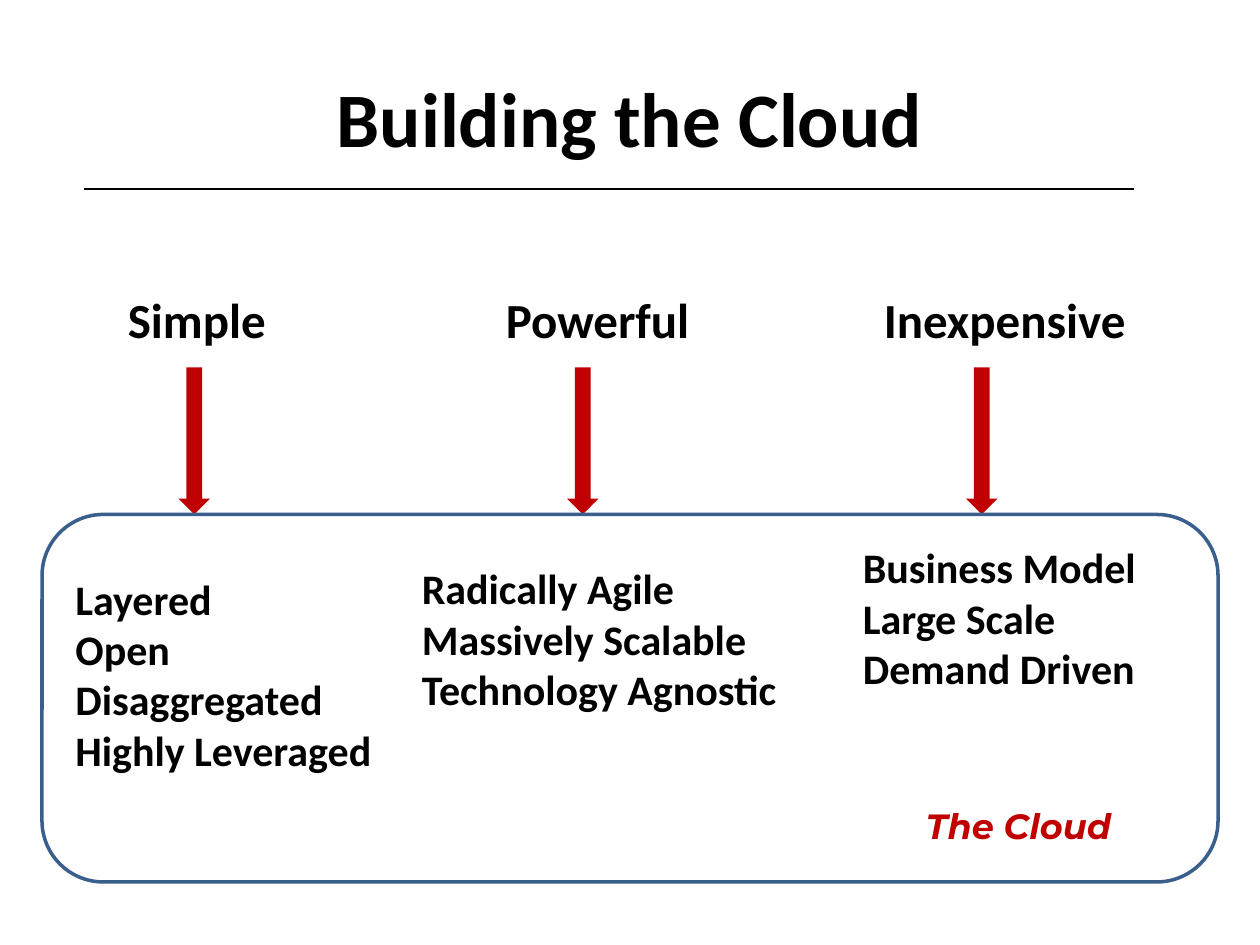
from pptx import Presentation, util as u
from pptx.dml import color
from pptx.enum import shapes, text
from pptx.oxml import ns
from lxml import etree

Pt = u.Pt
COLORS = {"ink": "000000", "accent": "C00000", "frame": "3A5F8C"}
BODY_FONT, LABEL_FONT = "Calibri", "Montserrat"
ARROW_LENGTH, ARROW_THICKNESS = 84, 18
HEADINGS = ["Simple", "Powerful", "Inexpensive"]
HEADING_STEP = 216
PILLARS = [
    (111, (12, 30, 186, 124),
     ["Layered", "Open", "Disaggregated", "Highly Leveraged"]),
    (333, (210, 24, 222, 94.5),
     ["Radically Agile", "Massively Scalable", "Technology Agnostic"]),
    (561, (462, 12, 186, 94.5),
     ["Business Model", "Large Scale", "Demand Driven"]),
]


def rgb(name):
    return color.RGBColor.from_string(COLORS[name])


def add_words(paragraph, words, size, tone="ink", font=BODY_FONT, italic=None):
    run = paragraph.add_run()
    run.text = words
    run.font.size = Pt(size)
    run.font.name = font
    run.font.bold = True
    run.font.italic = italic
    run.font.color.rgb = rgb(tone)


def add_text(slide, box, lines, size, wrap=True, **style):
    frame = slide.shapes.add_textbox(*map(Pt, box)).text_frame
    frame.word_wrap = wrap
    frame.auto_size = text.MSO_AUTO_SIZE.SHAPE_TO_FIT_TEXT
    for index, line in enumerate(lines):
        paragraph = frame.add_paragraph() if index else frame.paragraphs[0]
        add_words(paragraph, line, size, **style)
    return frame


def add_header(slide, box):
    left, top, width, height = box
    title = slide.shapes.title
    title.left, title.top, title.width, title.height = map(Pt, box)
    title.text_frame.vertical_anchor = text.MSO_ANCHOR.MIDDLE
    heading = title.text_frame.paragraphs[0]
    heading.alignment = text.PP_ALIGN.CENTER
    add_words(heading, "Building the Cloud", 44)

    rule_y = Pt(top + height - 3.6)
    rule = slide.shapes.add_connector(
        shapes.MSO_CONNECTOR.STRAIGHT,
        Pt(left + 12), rule_y, Pt(left + width - 36), rule_y)
    rule.line.color.rgb = rgb("ink")
    rule.line.width = Pt(1.5)
    etree.SubElement(rule.element.spPr, ns.qn("a:effectLst"))


def add_headings(slide, box):
    frame = add_text(slide, box, ["\t".join(HEADINGS)], 28, wrap=False)
    properties = frame.paragraphs[0]._p.get_or_add_pPr()
    tab_list = etree.SubElement(properties, ns.qn("a:tabLst"))
    for column in range(1, len(HEADINGS)):
        etree.SubElement(tab_list, ns.qn("a:tab"),
                         pos=str(Pt(column * HEADING_STEP)), algn="l")


def add_arrow(slide, center_x, tip_y):
    arrow = slide.shapes.add_shape(
        shapes.MSO_SHAPE.RIGHT_ARROW,
        Pt(center_x - ARROW_LENGTH / 2),
        Pt(tip_y - ARROW_LENGTH / 2 - ARROW_THICKNESS / 2),
        Pt(ARROW_LENGTH), Pt(ARROW_THICKNESS))
    arrow.rotation = 90
    arrow.shadow.inherit = False
    arrow.fill.solid()
    arrow.fill.fore_color.rgb = rgb("accent")
    arrow.line.fill.background()


def add_cloud(slide, box):
    left, top, width, height = box
    for arrow_x, (dx, dy, list_width, list_height), traits in PILLARS:
        add_arrow(slide, arrow_x, top)
        add_text(slide, (left + dx, top + dy, list_width, list_height), traits, 24)

    cloud = slide.shapes.add_shape(
        shapes.MSO_SHAPE.ROUNDED_RECTANGLE, *map(Pt, box))
    cloud.shadow.inherit = False
    cloud.fill.background()
    cloud.line.color.rgb = rgb("frame")
    cloud.line.width = Pt(2)

    add_text(slide, (left + width - 174, top + height - 48, 126, 31.5),
             ["The Cloud"], 20, wrap=False,
             tone="accent", font=LABEL_FONT, italic=True)


def main():
    deck = Presentation()
    deck.slide_width, deck.slide_height = Pt(720), Pt(540)
    slide = deck.slides.add_slide(deck.slide_layouts[5])
    add_header(slide, (36, 21.6, 648, 90))
    add_headings(slide, (66, 162, 590.4, 41))
    add_cloud(slide, (24, 294, 672, 210))
    deck.save("out.pptx")


if __name__ == "__main__":
    main()
